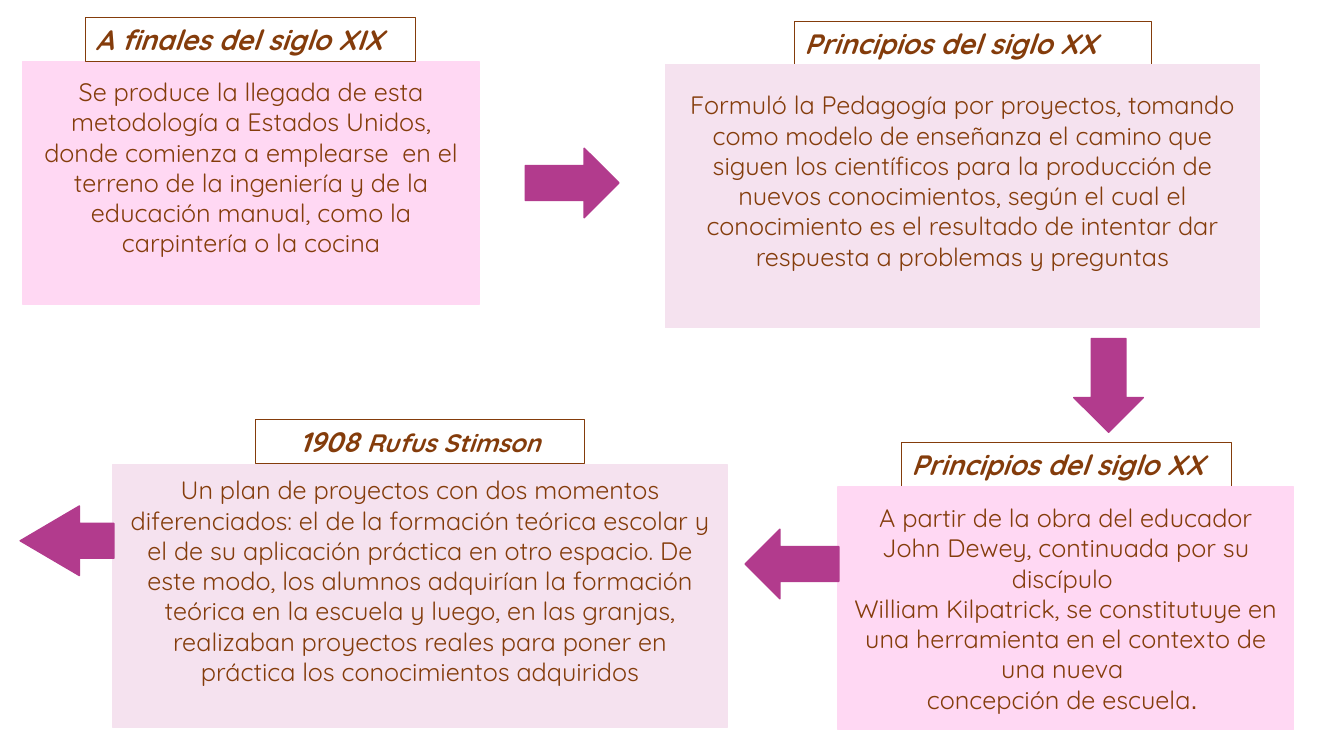
"""Timeline slide on the origins of project-based learning."""
from dataclasses import dataclass

import pptx
import pptx.dml.color
import pptx.enum.shapes
import pptx.enum.text
import pptx.util

RGBColor = pptx.dml.color.RGBColor
PP_ALIGN = pptx.enum.text.PP_ALIGN
MSO_SHAPE = pptx.enum.shapes.MSO_SHAPE

BROWN = RGBColor(0x84, 0x3C, 0x0B)
PINK = RGBColor(0xFF, 0xD8, 0xF3)
LILAC = RGBColor(0xF5, 0xE2, 0xEF)
MAGENTA = RGBColor(0xB2, 0x3B, 0x8D)
FONT = "Quicksand"
PX_PER_INCH = 100
BODY_SIZE = 18
HEADING_HEIGHT = 44
ARROW_WIDTH, ARROW_HEIGHT = 93, 69


@dataclass(frozen=True)
class Heading:
    """Outlined period title, made of (text, size) runs."""
    left: int
    top: int
    width: int
    runs: tuple[tuple[str, int], ...]
    align: PP_ALIGN = PP_ALIGN.LEFT


@dataclass(frozen=True)
class Panel:
    """Filled box with centred paragraphs of (text, font) runs."""
    left: int
    top: int
    width: int
    height: int
    fill: RGBColor
    paragraphs: tuple[tuple[tuple[str, str], ...], ...]
    bottom_inset: int = 36


@dataclass(frozen=True)
class Arrow:
    """Block arrow turned clockwise by an angle in degrees."""
    left: int
    top: int
    rotation: int = 0
    head: float = 0.5


HEADINGS_BEHIND = (
    Heading(894, 439, 327, (("Principios del siglo XX", 20),)),
    Heading(788, 21, 354, (("Principios del siglo XX", 20),)),
)
PANELS = (
    Panel(23, 61, 452, 241, PINK, (((
        "Se produce la llegada de esta metodología a Estados Unidos, donde "
        "comienza a emplearse  en el terreno de la ingeniería y de la "
        "educación manual, como la carpintería o la cocina", FONT),),)),
    Panel(660, 64, 589, 261, LILAC, (((
        "Formuló la Pedagogía por proyectos, tomando como modelo de enseñanza "
        "el camino que siguen los científicos para la producción de nuevos "
        "conocimientos, según el cual el conocimiento es el resultado de "
        "intentar dar respuesta a problemas y preguntas", FONT),),)),
    Panel(112, 461, 609, 261, LILAC, (((
        "Un plan de proyectos con dos momentos diferenciados: el de la "
        "formación teórica escolar y el de su aplicación práctica en otro "
        "espacio. De este modo, los alumnos adquirían la formación teórica en "
        "la escuela y luego, en las granjas, realizaban proyectos reales para "
        "poner en práctica los conocimientos adquiridos", FONT),),)),
    Panel(831, 483, 452, 241, PINK, (
        (("A partir de la obra del educador John Dewey, continuada por su "
          "discípulo ", FONT),),
        (("William Kilpatrick, se constitutuye en una herramienta en el "
          "contexto de una nueva ", FONT),),
        (("concepción de escuela", FONT), (". ", "Arial")),
    ), bottom_inset=5),
)
HEADINGS_IN_FRONT = (
    Heading(85, 17, 327, (("A finales del siglo XIX", 20),)),
    Heading(253, 416, 327, (("1908 ", 20), ("Rufus Stimson", 18)), PP_ALIGN.CENTER),
)
ARROWS = (
    Arrow(521, 147),
    Arrow(1053, 348, 90),
    Arrow(739, 525, 180),
    Arrow(20, 502, 180, 0.85),
)


def px(n: int) -> pptx.util.Emu:
    """Turn px into EMU."""
    return pptx.util.Emu(n * 914400 // PX_PER_INCH)


def add_run(p, text: str, size: int, font: str = FONT, strong: bool = False) -> None:
    """Append a brown run to a paragraph."""
    r = p.add_run()
    r.text = text
    r.font.name = font
    r.font.size = pptx.util.Pt(size)
    r.font.color.rgb = BROWN
    if strong:
        r.font.bold = r.font.italic = True


def paint(sp, color: RGBColor) -> None:
    """Give a shape one colour for fill and line, and no shadow."""
    sp.shadow.inherit = False
    sp.fill.solid()
    sp.fill.fore_color.rgb = color
    sp.line.color.rgb = color
    sp.line.width = pptx.util.Pt(1)


def draw_heading(s, heading: Heading) -> None:
    """Draw a period title."""
    sp = s.shapes.add_textbox(px(heading.left), px(heading.top),
                              px(heading.width), px(HEADING_HEIGHT))
    sp.line.color.rgb = BROWN
    sp.line.width = pptx.util.Pt(0.75)
    tf = sp.text_frame
    tf.word_wrap = True
    tf.auto_size = pptx.enum.text.MSO_AUTO_SIZE.SHAPE_TO_FIT_TEXT
    p = tf.paragraphs[0]
    p.alignment = heading.align
    for text, size in heading.runs:
        add_run(p, text, size, strong=True)


def draw_panel(s, panel: Panel) -> None:
    """Draw a description box."""
    sp = s.shapes.add_shape(MSO_SHAPE.RECTANGLE, px(panel.left), px(panel.top),
                            px(panel.width), px(panel.height))
    paint(sp, panel.fill)
    tf = sp.text_frame
    tf.word_wrap = True
    tf.vertical_anchor = pptx.enum.text.MSO_ANCHOR.MIDDLE
    tf.margin_bottom = px(panel.bottom_inset)
    for i, runs in enumerate(panel.paragraphs):
        p = tf.add_paragraph() if i else tf.paragraphs[0]
        p.alignment = PP_ALIGN.CENTER
        for text, font in runs:
            add_run(p, text, BODY_SIZE, font)


def draw_arrow(s, arrow: Arrow) -> None:
    """Draw a block arrow."""
    sp = s.shapes.add_shape(MSO_SHAPE.RIGHT_ARROW, px(arrow.left), px(arrow.top),
                            px(ARROW_WIDTH), px(ARROW_HEIGHT))
    paint(sp, MAGENTA)
    sp.rotation = arrow.rotation
    sp.adjustments[1] = arrow.head


def main() -> None:
    """Build and save the slide."""
    prs = pptx.Presentation()
    prs.slide_width, prs.slide_height = px(1333), px(750)
    s = prs.slides.add_slide(prs.slide_layouts[6])
    for heading in HEADINGS_BEHIND:
        draw_heading(s, heading)
    for panel in PANELS:
        draw_panel(s, panel)
    for heading in HEADINGS_IN_FRONT:
        draw_heading(s, heading)
    for arrow in ARROWS:
        draw_arrow(s, arrow)
    prs.save("out.pptx")


if __name__ == "__main__":
    main()
